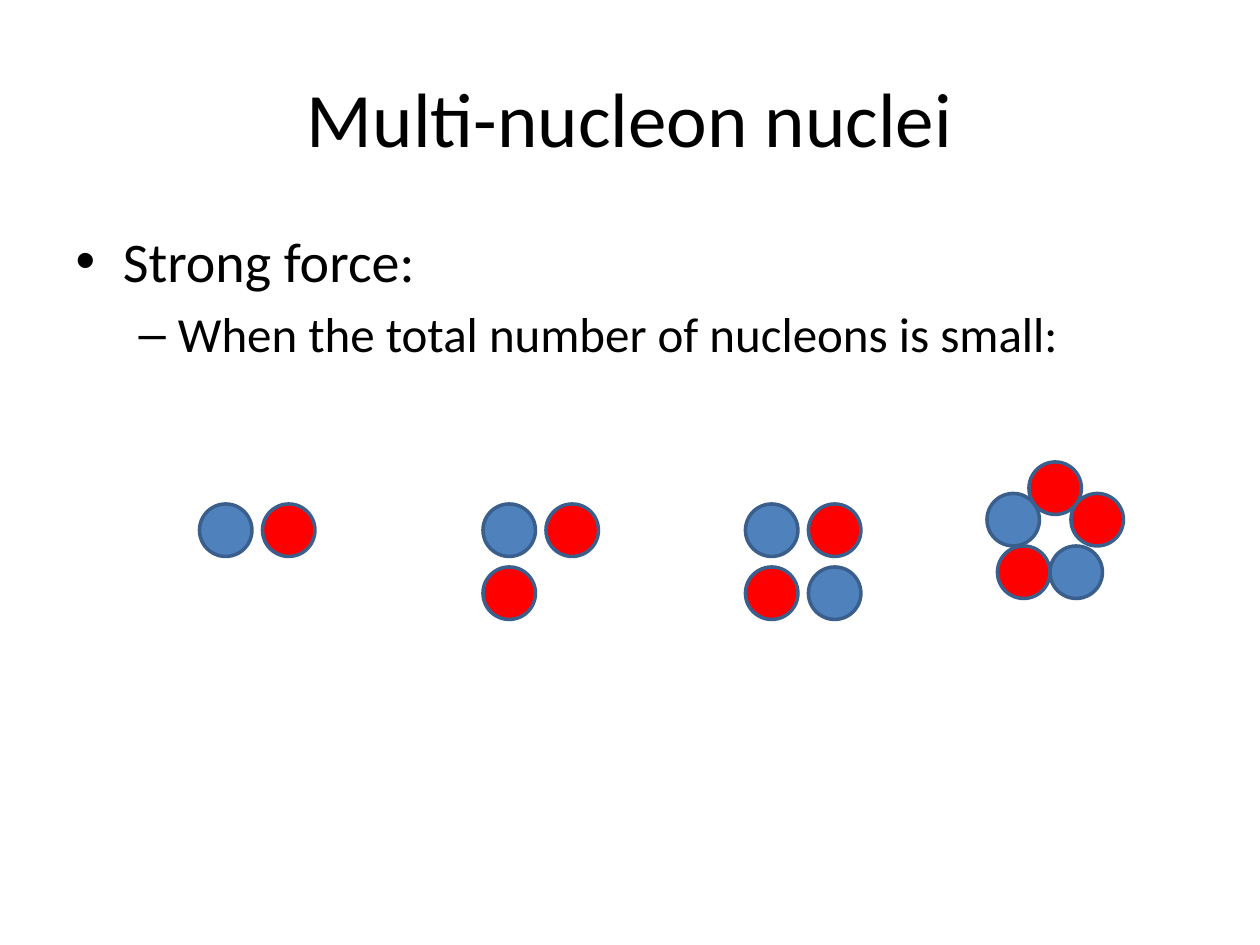
import pptx
import pptx.util
import pptx.dml.color
import pptx.enum.shapes
import pptx.enum.text

PX = 7620  # EMU per px, 120 px to the inch
COLORS = {"text": "000000", "blue": "4F81BD", "red": "FF0000", "outline": "3A5F8C"}


def rgb(name):
    return pptx.dml.color.RGBColor.from_string(COLORS[name])


def add_run(paragraph, text, size):
    run = paragraph.add_run()
    run.text = text
    run.font.name = "Calibri"
    run.font.size = pptx.util.Pt(size)
    run.font.color.rgb = rgb("text")


deck = pptx.Presentation()
deck.slide_width, deck.slide_height = 1200 * PX, 900 * PX
slide = deck.slides.add_slide(deck.slide_layouts[1])

# Title
heading = slide.shapes.title
heading.left, heading.top, heading.width, heading.height = (
    v * PX for v in (60, 36, 1080, 150))
heading.text_frame.vertical_anchor = pptx.enum.text.MSO_ANCHOR.MIDDLE
heading_line = heading.text_frame.paragraphs[0]
heading_line.alignment = pptx.enum.text.PP_ALIGN.CENTER
add_run(heading_line, "Multi-nucleon nuclei", 44)

# Bulleted list
strong_force = slide.placeholders[1]
strong_force.left, strong_force.top, strong_force.width, strong_force.height = (
    v * PX for v in (60, 210, 1080, 594))
add_run(strong_force.text_frame.paragraphs[0], "Strong force:", 32)
small_nuclei = strong_force.text_frame.add_paragraph()
small_nuclei.level = 1
add_run(small_nuclei, "When the total number of nucleons is small:", 28)

# Nuclei: origin, then nucleons as colour and offset, back to front
NUCLEON = 50
STEP = 60
square = [("blue", 0, 0), ("red", STEP, 0), ("red", 0, STEP), ("blue", STEP, STEP)]
ring = [("blue", 0, 30), ("red", 80, 30), ("red", 10, 80), ("red", 40, 0),
        ("blue", 60, 80)]
nuclei = [
    (190, 480, square[:2]),
    (460, 480, square[:3]),
    (710, 480, square),
    (940, 440, ring),
]
for left, top, nucleons in nuclei:
    for color, dx, dy in nucleons:
        nucleon = slide.shapes.add_shape(
            pptx.enum.shapes.MSO_SHAPE.OVAL,
            (left + dx) * PX, (top + dy) * PX, NUCLEON * PX, NUCLEON * PX)
        nucleon.shadow.inherit = False
        nucleon.fill.solid()
        nucleon.fill.fore_color.rgb = rgb(color)
        nucleon.line.color.rgb = rgb("outline")
        nucleon.line.width = pptx.util.Pt(2)

deck.save("out.pptx")
